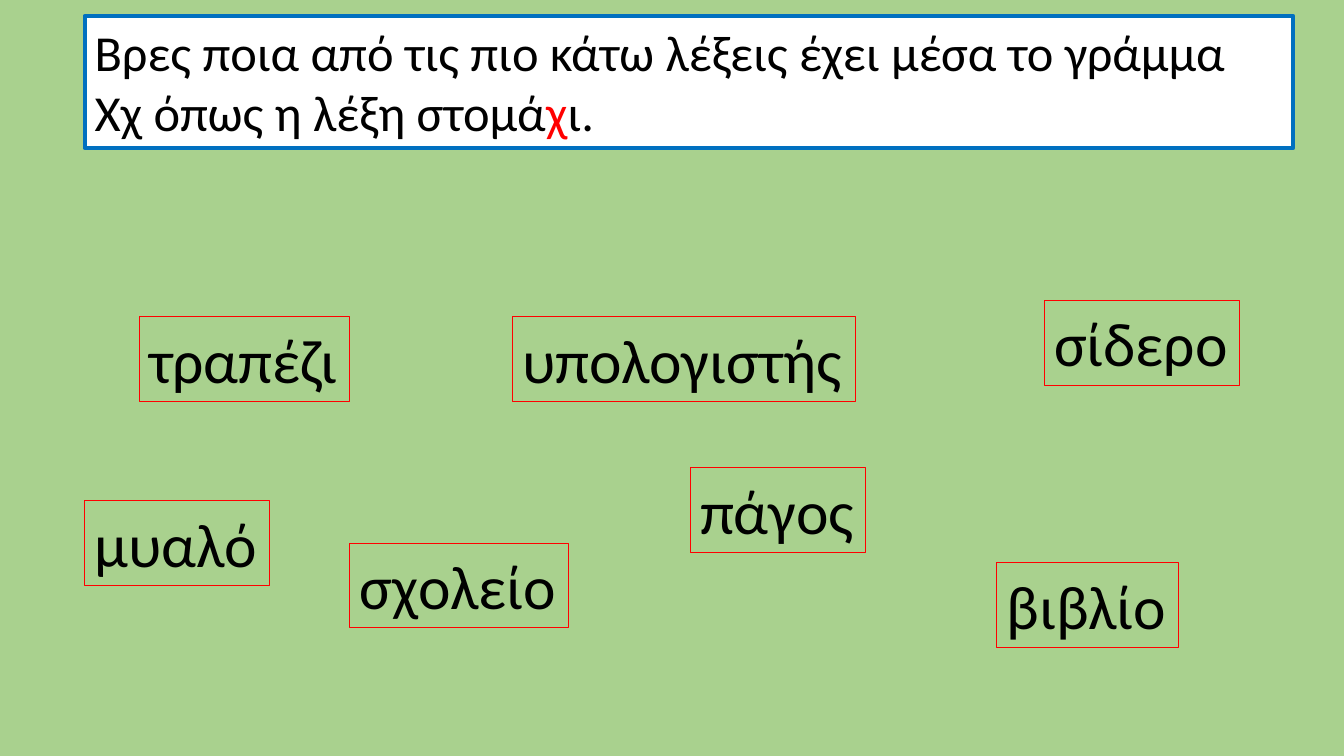
from pptx import Presentation
from pptx.dml.color import RGBColor
from pptx.enum import text
from pptx.util import Pt

BLACK, RED, BLUE, WHITE, GREEN = "000000", "FF0000", "0070C0", "FFFFFF", "A9D18E"
WORD_HEIGHT = 60.5
WORDS = [
    ("τραπέζι", 99.4, 226.1, 150.5),
    ("πάγος", 493.2, 334.1, 125.3),
    ("σίδερο", 745.9, 214.6, 139.7),
    ("υπολογιστής", 365.8, 226.1, 245.5),
    ("σχολείο", 249.8, 388.1, 156.2),
    ("βιβλίο", 712.1, 401.8, 129.6),
    ("μυαλό", 60.5, 357.8, 131.8),
]


def colour(value):
    """Turn a hex string into a colour."""
    return RGBColor.from_string(value)


def add_span(para, wording, size, ink=BLACK):
    """Append formatted text to a paragraph."""
    span = para.add_run()
    span.text = wording
    span.font.name = "Calibri"
    span.font.size = Pt(size)
    span.font.color.rgb = colour(ink)


def add_box(page, left, top, width, height, line, weight, fill=None, wrap=False):
    """Add an outlined text box and return its first paragraph."""
    box = page.shapes.add_textbox(Pt(left), Pt(top), Pt(width), Pt(height))
    box.line.color.rgb = colour(line)
    box.line.width = Pt(weight)
    if fill:
        box.fill.solid()
        box.fill.fore_color.rgb = colour(fill)
    box.text_frame.word_wrap = wrap
    box.text_frame.auto_size = text.MSO_AUTO_SIZE.SHAPE_TO_FIT_TEXT
    return box.text_frame.paragraphs[0]


def add_question(page):
    """Add the question with its key letter in red."""
    para = add_box(page, 60.5, 11.5, 863.3, 94.3, BLUE, 3, fill=WHITE, wrap=True)
    add_span(para, "Βρες ποια από τις πιο κάτω λέξεις έχει μέσα το γράμμα "
                   "Χχ όπως η λέξη στομά", 36)
    add_span(para, "χ", 36, ink=RED)
    add_span(para, "ι.", 36)


def main():
    """Build and save the slide."""
    deck = Presentation()
    deck.slide_width, deck.slide_height = Pt(960), Pt(540)
    page = deck.slides.add_slide(deck.slide_layouts[6])
    page.background.fill.solid()
    page.background.fill.fore_color.rgb = colour(GREEN)
    add_question(page)
    for word, left, top, width in WORDS:
        add_span(add_box(page, left, top, width, WORD_HEIGHT, RED, 0.75), word, 44)
    deck.save("out.pptx")


if __name__ == "__main__":
    main()
